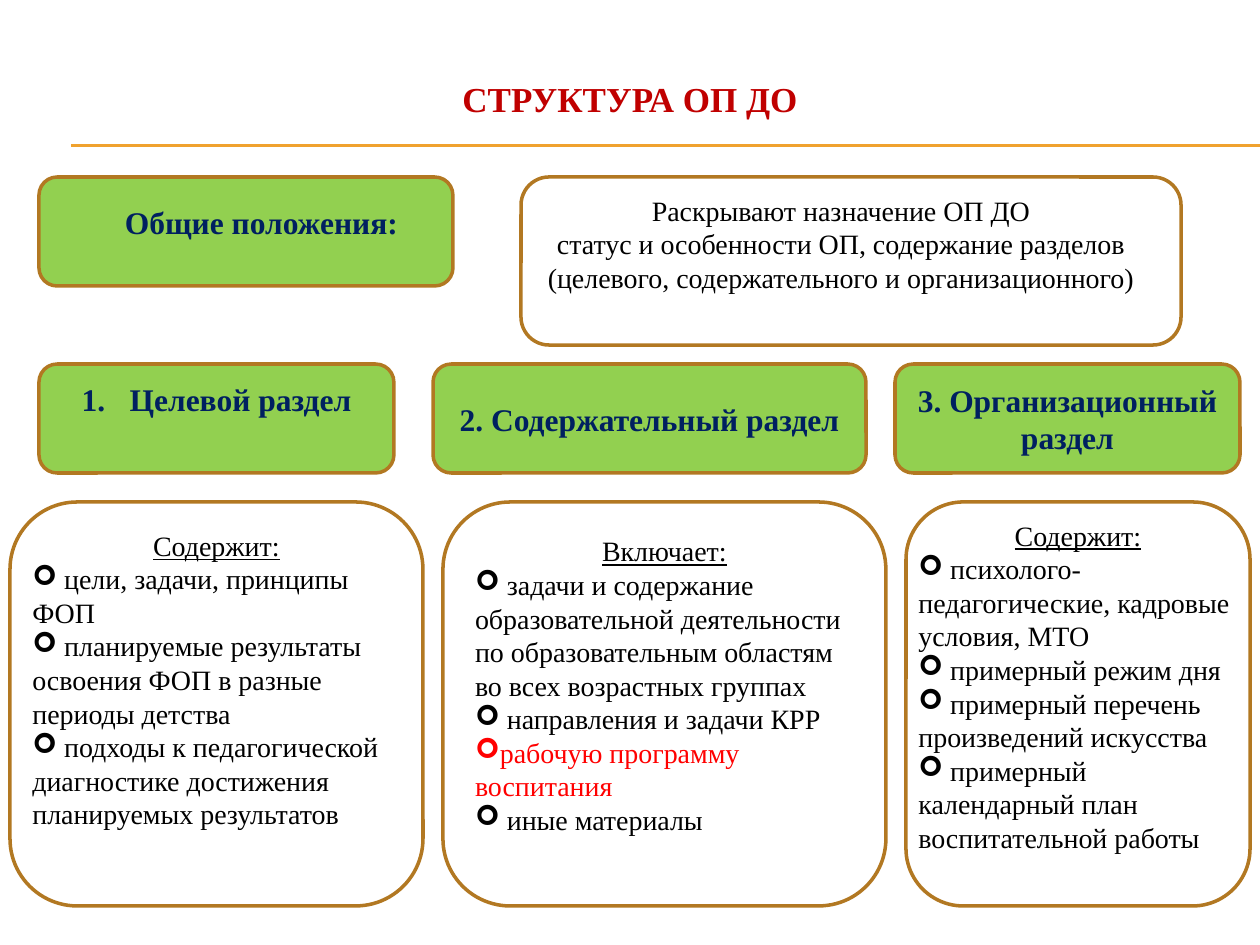
from lxml import etree
from pptx import Presentation
from pptx import util as u
from pptx.dml.color import RGBColor
from pptx.enum import shapes, text
from pptx.oxml.ns import qn

SCALE = 914400 / 126
FONT = "Times New Roman"
HUES = {"title": "C00000", "head": "002060", "body": "000000", "alert": "FF0000",
        "fill": "92D050", "edge": "B27822", "rule": "F0A22E"}


def px(n):
    return u.Emu(round(n * SCALE))


def rgb(name):
    return RGBColor.from_string(HUES[name])


def add_run(para, words, size, hue, bold=False, under=False):
    run = para.add_run()
    run.text = words
    font = run.font
    font.name, font.size, font.bold = FONT, u.Pt(size), bold
    font.color.rgb = rgb(hue)
    if under:
        font.underline = True


def add_para(frame, align):
    first = frame.paragraphs[0]
    para = frame.add_paragraph() if first.runs else first
    para.alignment = align
    return para


def add_mark(para, tag, **attrs):
    etree.SubElement(para._p.get_or_add_pPr(), qn(tag), attrs)


def add_rule(slide, y):
    line = slide.shapes.add_connector(
        shapes.MSO_CONNECTOR.STRAIGHT, px(71), px(y), px(1260), px(y))
    line.line.color.rgb = rgb("rule")
    line.line.width = u.Pt(0.75)
    etree.SubElement(line._element.spPr, qn("a:effectLst"))


def add_card(slide, x, y, w, h, fill=None):
    card = slide.shapes.add_shape(
        shapes.MSO_SHAPE.ROUNDED_RECTANGLE, px(x), px(y), px(w), px(h))
    card.shadow.inherit = False
    if fill:
        card.fill.solid()
        card.fill.fore_color.rgb = rgb(fill)
    else:
        card.fill.background()
    card.line.color.rgb = rgb("edge")
    card.line.width = u.Pt(2)
    frame = card.text_frame
    frame.word_wrap = True
    frame.vertical_anchor = text.MSO_ANCHOR.MIDDLE
    return frame


def add_box(slide, x, y, w, h):
    frame = slide.shapes.add_textbox(px(x), px(y), px(w), px(h)).text_frame
    frame.word_wrap = True
    return frame


def add_head(frame, words):
    para = add_para(frame, text.PP_ALIGN.CENTER)
    add_run(para, words, 18, "head", bold=True)
    return para


def add_list(frame, head, items, alert=None):
    add_run(add_para(frame, text.PP_ALIGN.CENTER), head, 16, "body", under=True)
    for item in items:
        para = add_para(frame, text.PP_ALIGN.LEFT)
        add_mark(para, "a:buFont", typeface="Wingdings")
        add_mark(para, "a:buChar", char="➢")
        add_run(para, item, 16, "alert" if item == alert else "body")


def add_title(slide, words):
    title = slide.shapes.title
    title.left, title.top, title.width, title.height = map(px, (63, 38, 1134, 120))
    frame = title.text_frame
    frame.vertical_anchor = text.MSO_ANCHOR.MIDDLE
    add_run(add_para(frame, text.PP_ALIGN.CENTER), words, 20, "title", bold=True)


def add_intro(slide):
    add_card(slide, 39, 177, 414, 109, "fill")
    add_card(slide, 521, 177, 660, 168)
    add_head(add_box(slide, 69, 197, 393, 50), "Общие положения: ")
    note = add_box(slide, 521, 187, 640, 115)
    for words in ("Раскрывают назначение ОП ДО",
                  "статус и особенности ОП, содержание разделов "
                  "(целевого, содержательного и организационного)"):
        add_run(add_para(note, text.PP_ALIGN.CENTER), words, 16, "body")


def add_heads(slide):
    top, high = 364, 109
    add_card(slide, 39, top, 355, high, "fill")
    para = add_head(add_box(slide, 49, 374, 335, 50), "Целевой раздел")
    props = para._p.get_or_add_pPr()
    props.set("marL", str(px(48)))
    props.set("indent", str(-px(48)))
    add_mark(para, "a:buFont", typeface="+mj-lt")
    add_mark(para, "a:buAutoNum", type="arabicPeriod")
    add_head(add_card(slide, 433, top, 433, high, "fill"), "2. Содержательный раздел")
    add_head(add_card(slide, 895, top, 345, high, "fill"), "3. Организационный раздел")


def add_lists(slide):
    top, high = 502, 404
    add_card(slide, 10, top, 413, high)
    add_list(add_box(slide, 20, 522, 393, 318), "Содержит:", [
        " цели, задачи, принципы ФОП",
        " планируемые результаты освоения ФОП в разные периоды детства",
        " подходы к педагогической диагностике достижения планируемых результатов"])

    mid = add_card(slide, 443, top, 443, high)
    mid.margin_bottom = px(44)
    alert = "рабочую программу воспитания"
    add_list(mid, "Включает:", [
        " задачи и содержание образовательной деятельности "
        "по образовательным областям во всех возрастных группах",
        " направления и задачи КРР",
        alert,
        " иные материалы"], alert)

    add_card(slide, 906, top, 344, high)
    add_list(add_box(slide, 906, 512, 344, 390), "Содержит:", [
        " психолого-педагогические, кадровые условия, МТО",
        " примерный режим дня",
        " примерный перечень произведений искусства",
        " примерный календарный план воспитательной работы"])


def main():
    deck = Presentation()
    deck.slide_width, deck.slide_height = px(1260), px(945)
    slide = deck.slides.add_slide(deck.slide_layouts[5])
    for y in (145, 146):
        add_rule(slide, y)
    add_title(slide, "СТРУКТУРА ОП ДО")
    add_intro(slide)
    add_heads(slide)
    add_lists(slide)
    deck.save("out.pptx")


if __name__ == "__main__":
    main()
